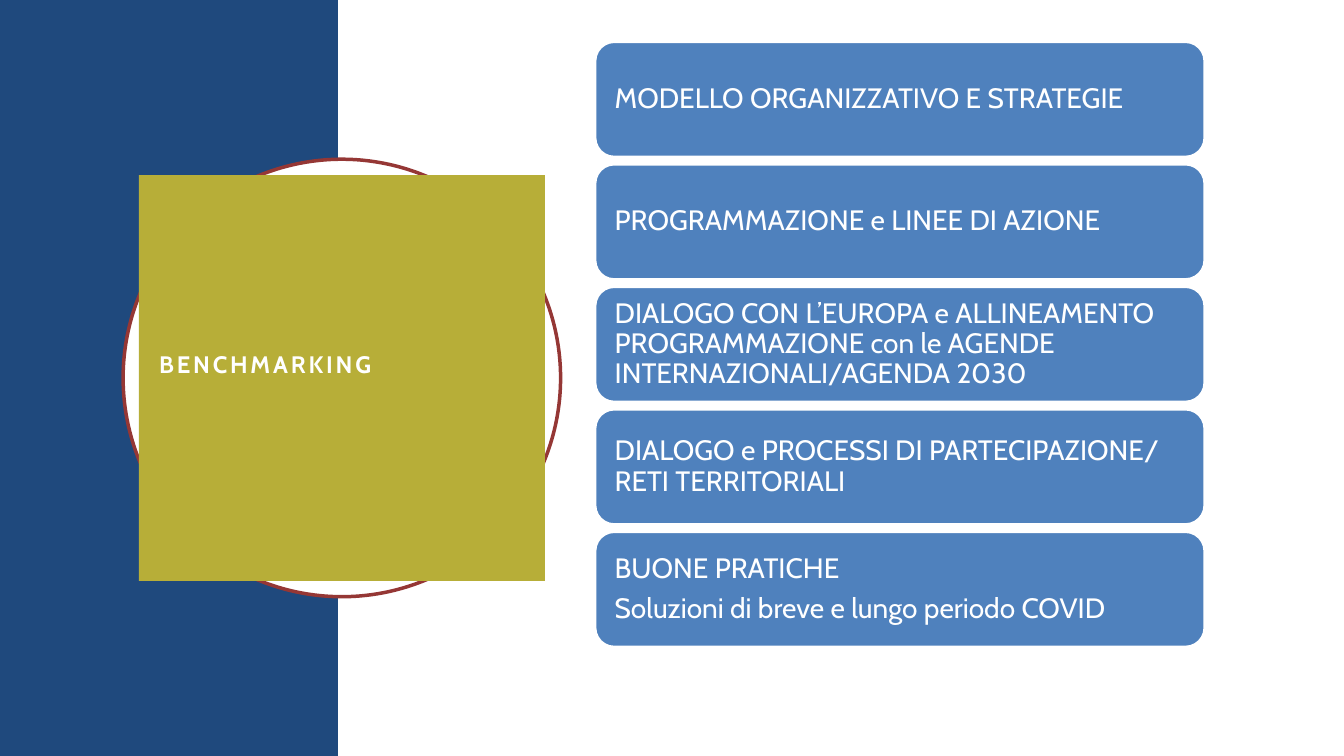
from pptx import Presentation
from pptx.dml.color import RGBColor
from pptx.enum.shapes import MSO_SHAPE
from pptx.enum.text import MSO_ANCHOR, PP_ALIGN
from pptx.util import Pt

TITLE = "BENCHMARKING"
TOPICS = [
    ["MODELLO ORGANIZZATIVO E STRATEGIE"],
    ["PROGRAMMAZIONE e LINEE DI AZIONE"],
    ["DIALOGO CON L’EUROPA e ALLINEAMENTO PROGRAMMAZIONE con le AGENDE "
     "INTERNAZIONALI/AGENDA 2030"],
    ["DIALOGO e PROCESSI DI PARTECIPAZIONE/ RETI TERRITORIALI"],
    ["BUONE PRATICHE", "Soluzioni di breve e lungo periodo COVID"],
]

FONT = "Cabin"
WHITE, NAVY, BLUE, OLIVE, RED = "FFFFFF", "1F497D", "4F81BD", "B7AE38", "953735"
SLIDE_WIDTH, SLIDE_HEIGHT = 960, 540
BAND_WIDTH = 241.6
CENTER_X, CENTER_Y = 244.2, 270
CIRCLE_SIZE, SQUARE_SIZE = 312.5, 290
CARD_LEFT, CARD_TOP, CARD_WIDTH, CARD_HEIGHT = 425, 29.75, 435.6, 82.5
CARD_PITCH = 87.5


def color(hex_code):
    return RGBColor.from_string(hex_code)


def add_block(slide, kind, left, top, width, height, fill, line=None, line_width=0):
    shape = slide.shapes.add_shape(kind, Pt(left), Pt(top), Pt(width), Pt(height))
    shape.shadow.inherit = False
    shape.fill.solid()
    shape.fill.fore_color.rgb = color(fill)
    if line:
        shape.line.color.rgb = color(line)
        shape.line.width = Pt(line_width)
    else:
        shape.line.fill.background()
    return shape


def add_centered(slide, kind, size, fill, **outline):
    """Place a square-sized shape around the shared centre of the title emblem."""
    return add_block(slide, kind, CENTER_X - size / 2, CENTER_Y - size / 2,
                     size, size, fill, **outline)


def write_text(shape, lines, size, insets, bold=False, tracking=0,
               line_spacing=1.0, space_after=0):
    """Fill a shape with paragraphs; insets run left, top, right, bottom in points."""
    frame = shape.text_frame
    frame.word_wrap = True
    frame.vertical_anchor = MSO_ANCHOR.MIDDLE
    (frame.margin_left, frame.margin_top,
     frame.margin_right, frame.margin_bottom) = map(Pt, insets)
    for index, line in enumerate(lines):
        paragraph = frame.add_paragraph() if index else frame.paragraphs[0]
        paragraph.alignment = PP_ALIGN.LEFT
        paragraph.line_spacing = line_spacing
        paragraph.space_after = Pt(space_after)
        run = paragraph.add_run()
        run.text = line
        run.font.name = FONT
        run.font.size = Pt(size)
        run.font.bold = bold
        run.font.color.rgb = color(WHITE)
        if tracking:
            run.font._element.set("spc", str(tracking * 100))


def main():
    presentation = Presentation()
    presentation.slide_width = Pt(SLIDE_WIDTH)
    presentation.slide_height = Pt(SLIDE_HEIGHT)
    slide = presentation.slides.add_slide(presentation.slide_layouts[6])

    add_block(slide, MSO_SHAPE.RECTANGLE, 0, 0, BAND_WIDTH, SLIDE_HEIGHT, NAVY)
    add_block(slide, MSO_SHAPE.RECTANGLE, BAND_WIDTH, 0,
              SLIDE_WIDTH - BAND_WIDTH, SLIDE_HEIGHT, WHITE)
    add_centered(slide, MSO_SHAPE.OVAL, CIRCLE_SIZE, WHITE, line=RED, line_width=2.5)
    square = add_centered(slide, MSO_SHAPE.RECTANGLE, SQUARE_SIZE, OLIVE)
    write_text(square, [TITLE], 17, (14.4, 14.4, 14.4, 35), bold=True, tracking=2)

    for index, lines in enumerate(TOPICS):
        card = add_block(slide, MSO_SHAPE.ROUNDED_RECTANGLE, CARD_LEFT,
                         CARD_TOP + index * CARD_PITCH, CARD_WIDTH, CARD_HEIGHT,
                         BLUE, line=WHITE, line_width=2)
        write_text(card, lines, 20, (10, 10, 6, 10), line_spacing=0.9, space_after=7)

    presentation.save("out.pptx")


if __name__ == "__main__":
    main()
